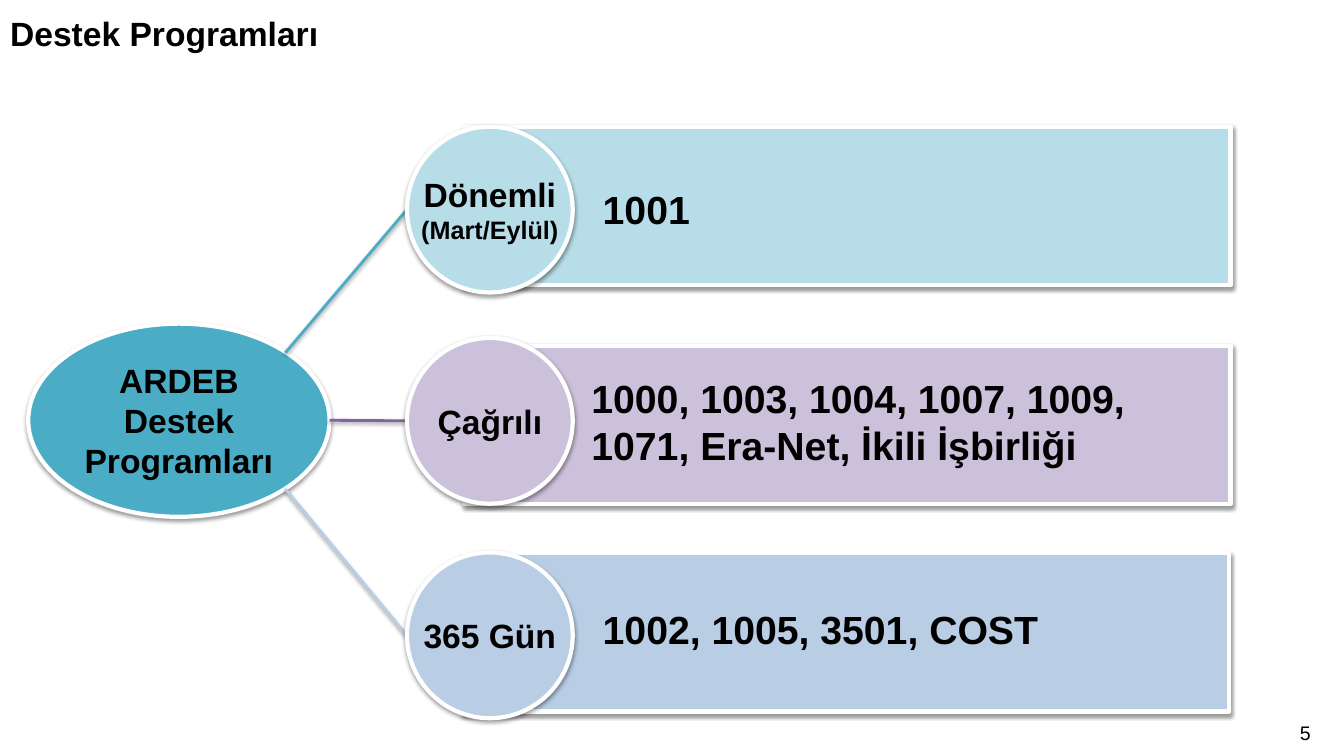
"""Build the support programmes slide: a hub linked to three programme groups."""
from dataclasses import dataclass

from lxml.etree import SubElement
from pptx import Presentation
from pptx.dml.color import RGBColor
from pptx.enum.shapes import MSO_CONNECTOR, MSO_SHAPE
from pptx.enum.text import MSO_ANCHOR, PP_ALIGN
from pptx.oxml.ns import qn
from pptx.util import Pt

BLACK = RGBColor(0x00, 0x00, 0x00)
WHITE = RGBColor(0xFF, 0xFF, 0xFF)
TEAL = RGBColor(0x4B, 0xAC, 0xC6)
PALE_TEAL = RGBColor(0xB7, 0xDE, 0xE8)
PURPLE = RGBColor(0x80, 0x64, 0xA2)
PALE_PURPLE = RGBColor(0xCC, 0xC1, 0xDA)
PALE_BLUE = RGBColor(0xB9, 0xCD, 0xE5)

BAR_WIDTH, BAR_HEIGHT = 547.5, 113
CIRCLE_LEFT, CIRCLE_SIZE = 290.7, 118.4


@dataclass(frozen=True)
class Line:
    """One paragraph of text with its size."""
    text: str
    size: float = 24
    bold: bool = True


@dataclass(frozen=True)
class Box:
    """Position and size in points."""
    left: float
    top: float
    width: float
    height: float


@dataclass(frozen=True)
class Group:
    """One programme group: circle label, bar text and link from the hub."""
    labels: tuple[Line, ...]
    programmes: str
    bar_left: float
    bar_top: float
    circle_top: float
    text_box: Box
    fill: RGBColor
    link_color: RGBColor
    link_start: tuple[float, float]


GROUPS = (
    Group((Line("Dönemli"), Line("(Mart/Eylül)", 18)), "1001", 331.5, 90.7, 90.5,
          Box(423.4, 129, 300, 41), PALE_TEAL, TEAL, (203.8, 252)),
    Group((Line("Çağrılı"),), "1000, 1003, 1004, 1007, 1009, 1071, Era-Net, İkili İşbirliği",
          331.5, 247, 241.4, Box(415.4, 263.5, 463.7, 75), PALE_PURPLE, PURPLE, (235.4, 300.2)),
    Group((Line("365 Gün"),), "1002, 1005, 3501, COST", 330.5, 395.3, 394.6,
          Box(423.4, 429.1, 442, 41), PALE_BLUE, PALE_BLUE, (203.8, 349.2)),
)


def add_shadow(shape) -> None:
    """Give a shape or connector a soft shadow straight below it."""
    effects = SubElement(shape._element.spPr, qn("a:effectLst"))
    shadow = SubElement(effects, qn("a:outerShdw"), blurRad=str(Pt(3.1)), dist=str(Pt(1.6)),
                        dir="5400000", rotWithShape="0")
    color = SubElement(shadow, qn("a:srgbClr"), val=str(BLACK))
    SubElement(color, qn("a:alpha"), val="38000")


def write(frame, lines: tuple[Line, ...], align: PP_ALIGN) -> None:
    """Fill a text frame, one paragraph for each line."""
    for index, line in enumerate(lines):
        para = frame.add_paragraph() if index else frame.paragraphs[0]
        para.alignment = align
        span = para.add_run()
        span.text = line.text
        span.font.name = "Arial"
        span.font.size = Pt(line.size)
        span.font.bold = line.bold
        span.font.color.rgb = BLACK


def add_panel(page, kind: MSO_SHAPE, box: Box, fill: RGBColor,
              lines: tuple[Line, ...] = (), wrap: bool = False) -> None:
    """Draw a white-edged shape with a shadow and centred text."""
    panel = page.shapes.add_shape(kind, Pt(box.left), Pt(box.top), Pt(box.width), Pt(box.height))
    panel.fill.solid()
    panel.fill.fore_color.rgb = fill
    panel.line.color.rgb = WHITE
    panel.line.width = Pt(3)
    add_shadow(panel)
    frame = panel.text_frame
    frame.word_wrap = wrap
    frame.vertical_anchor = MSO_ANCHOR.MIDDLE
    frame.margin_left = frame.margin_right = frame.margin_top = frame.margin_bottom = Pt(0)
    write(frame, lines, PP_ALIGN.CENTER)


def add_text(page, box: Box, line: Line, align: PP_ALIGN = PP_ALIGN.LEFT) -> None:
    """Place a wrapping text box."""
    label = page.shapes.add_textbox(Pt(box.left), Pt(box.top), Pt(box.width), Pt(box.height))
    label.text_frame.word_wrap = True
    write(label.text_frame, (line,), align)


def add_link(page, group: Group) -> None:
    """Connect the hub to the left edge of a group's circle."""
    start_x, start_y = group.link_start
    link = page.shapes.add_connector(MSO_CONNECTOR.STRAIGHT, Pt(start_x), Pt(start_y),
                                     Pt(CIRCLE_LEFT), Pt(group.circle_top + CIRCLE_SIZE / 2))
    link.line.color.rgb = group.link_color
    link.line.width = Pt(2)
    add_shadow(link)


def add_title(page, text: str) -> None:
    """Move and format the title placeholder."""
    title = page.shapes.title
    title.left, title.top, title.width, title.height = Pt(0), Pt(0), Pt(818.6), Pt(47.5)
    title.text_frame.vertical_anchor = MSO_ANCHOR.MIDDLE
    write(title.text_frame, (Line(text),), PP_ALIGN.LEFT)


def main() -> None:
    """Build and save the deck."""
    deck = Presentation()
    deck.slide_width, deck.slide_height = Pt(960), Pt(540)
    page = deck.slides.add_slide(deck.slide_layouts[5])
    add_title(page, "Destek Programları")
    for group in GROUPS:
        add_panel(page, MSO_SHAPE.RECTANGLE,
                  Box(group.bar_left, group.bar_top, BAR_WIDTH, BAR_HEIGHT), group.fill)
    add_panel(page, MSO_SHAPE.OVAL, Box(20.2, 231.2, 215.2, 138), TEAL,
              (Line("ARDEB"), Line("Destek Programları")), wrap=True)
    for group in GROUPS:
        add_link(page, group)
        add_panel(page, MSO_SHAPE.OVAL,
                  Box(CIRCLE_LEFT, group.circle_top, CIRCLE_SIZE, CIRCLE_SIZE),
                  group.fill, group.labels)
        add_text(page, group.text_box, Line(group.programmes, 28))
    add_text(page, Box(746, 511.2, 197.3, 28.8), Line("5", 14, False), PP_ALIGN.RIGHT)
    deck.save("out.pptx")


if __name__ == "__main__":
    main()
